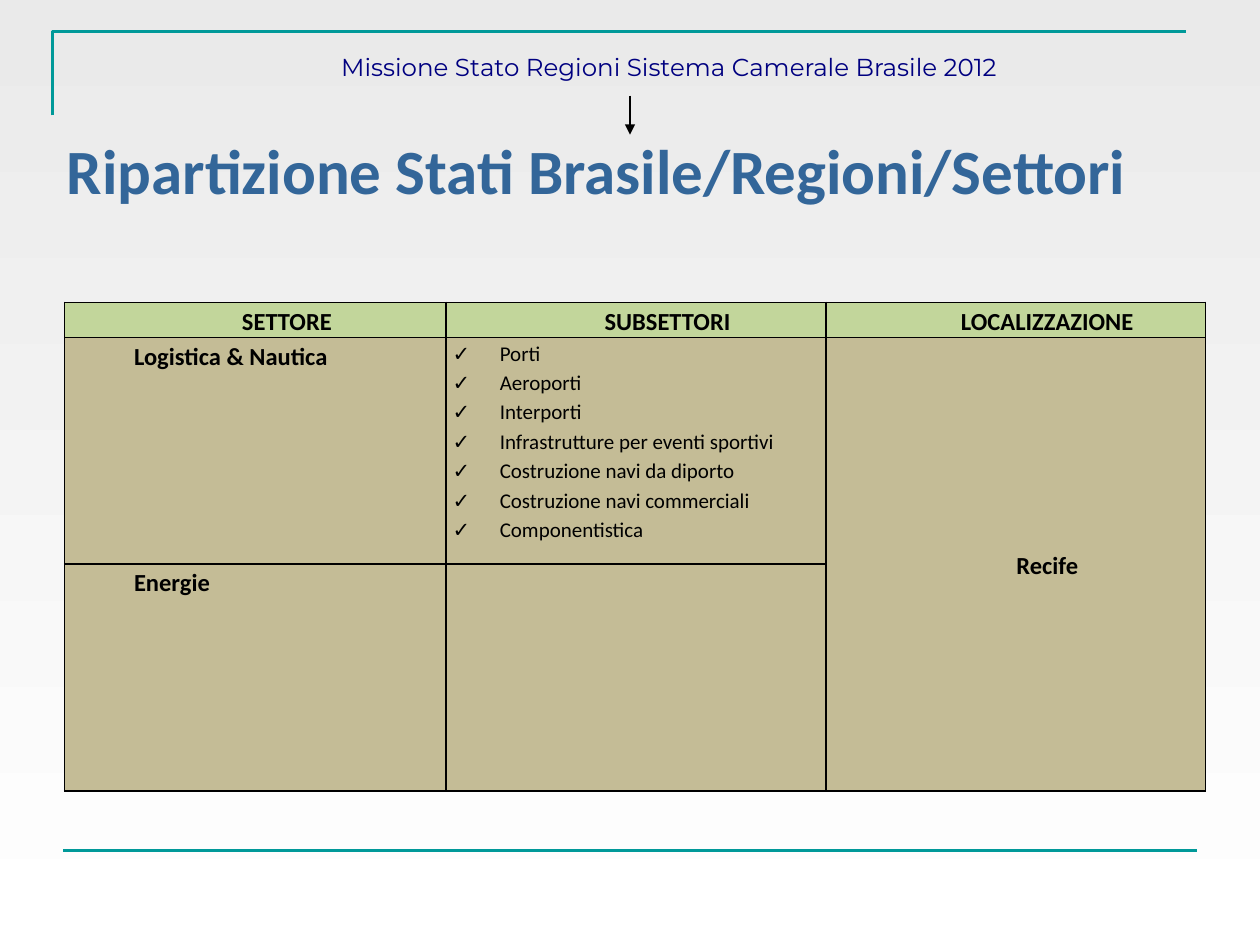
from dataclasses import dataclass

from lxml.etree import SubElement
from pptx import Presentation
from pptx.dml.color import RGBColor
from pptx.enum.shapes import MSO_CONNECTOR
from pptx.enum.text import MSO_ANCHOR, MSO_AUTO_SIZE, PP_ALIGN
from pptx.oxml import parse_xml
from pptx.oxml.ns import nsdecls, qn
from pptx.util import Pt


@dataclass(frozen=True)
class Theme:
    top: str = "EAEAEA"
    base: str = "FFFFFF"
    rule: str = "009999"
    event: str = "000080"
    title: str = "336699"
    ink: str = "000000"
    head: str = "C2D69B"
    body: str = "C4BC96"
    font: str = "Calibri"
    sans: str = "Montserrat"
    large: int = 36
    mid: int = 14
    small: int = 12


THEME = Theme()
COLS = (218, 217, 217)
ROWS = (20, 129.6, 129.6)
HEADS = ("SETTORE", "SUBSETTORI", "LOCALIZZAZIONE")
SECTORS = ("Logistica & Nautica", "Energie")
ITEMS = (
    "Porti",
    "Aeroporti",
    "Interporti",
    "Infrastrutture per eventi sportivi",
    "Costruzione navi da diporto",
    "Costruzione navi commerciali",
    "Componentistica",
)


def paint(color, value):
    color.rgb = RGBColor.from_string(value)


def write(frame, *lines, size=THEME.mid, font=THEME.font, color=THEME.ink,
          bold=False, align=PP_ALIGN.LEFT, space=None, left=0, hang=0,
          bullet=None):
    """Fill a text frame with one paragraph per line."""
    for num, line in enumerate(lines):
        para = frame.add_paragraph() if num else frame.paragraphs[0]
        para.alignment = align
        if space:
            para.line_spacing = space
        props = para._p.get_or_add_pPr()
        props.set("marL", str(Pt(left)))
        props.set("indent", str(Pt(-hang)))
        if bullet:
            SubElement(props, qn("a:buFont")).set("typeface", font)
            SubElement(props, qn("a:buChar")).set("char", bullet)
        run = para.add_run()
        run.text = line
        run.font.size = Pt(size)
        run.font.name = font
        run.font.bold = bold
        paint(run.font.color, color)


def shade(slide):
    fill = slide.background.fill
    fill.gradient()
    fill.gradient_angle = 270
    for stop, value in zip(fill.gradient_stops, (THEME.top, THEME.base)):
        paint(stop.color, value)


def place(shape, left, top, width, height):
    shape.left, shape.top = Pt(left), Pt(top)
    shape.width, shape.height = Pt(width), Pt(height)
    frame = shape.text_frame
    frame.word_wrap = False
    frame.auto_size = MSO_AUTO_SIZE.NONE
    frame.vertical_anchor = MSO_ANCHOR.TOP
    return frame


def add_line(slide, start, end, color, width, arrow=False):
    line = slide.shapes.add_connector(
        MSO_CONNECTOR.STRAIGHT, *map(Pt, start + end))
    paint(line.line.color, color)
    line.line.width = Pt(width)
    if arrow:
        tail = SubElement(line.line._get_or_add_ln(), qn("a:tailEnd"))
        tail.set("type", "triangle")
    SubElement(line._element.spPr, qn("a:effectLst"))


def add_frame(slide):
    """Draw the corner rule at the top left of the slide."""
    pen = slide.shapes.build_freeform(Pt(30), Pt(66))
    pen.add_line_segments(
        [(Pt(30), Pt(18)), (Pt(678), Pt(18))], close=False)
    shape = pen.convert_to_shape()
    shape.shadow.inherit = False
    shape.fill.background()
    paint(shape.line.color, THEME.rule)
    shape.line.width = Pt(1.5)


def style(cell, color):
    cell.margin_left = cell.margin_right = Pt(3.6)
    cell.margin_top = cell.margin_bottom = 0
    cell.fill.solid()
    paint(cell.fill.fore_color, color)
    props = cell._tc.get_or_add_tcPr()
    for num, side in enumerate("LRTB"):
        props.insert(num, parse_xml(
            f'<a:ln{side} {nsdecls("a")} w="{Pt(1)}"><a:solidFill>'
            f'<a:srgbClr val="{THEME.ink}"/></a:solidFill></a:ln{side}>'))


def add_grid(slide):
    table = slide.shapes.add_table(
        len(ROWS), len(COLS), Pt(37), Pt(172.8),
        Pt(sum(COLS)), Pt(sum(ROWS))).table
    table.first_row = table.horz_banding = False
    for col, width in zip(table.columns, COLS):
        col.width = Pt(width)
    for num, (row, height) in enumerate(zip(table.rows, ROWS)):
        row.height = Pt(height)
        for cell in row.cells:
            style(cell, THEME.body if num else THEME.head)

    site = table.cell(1, 2)
    site.merge(table.cell(2, 2))
    heads = zip(table.rows[0].cells, HEADS)
    for cell, text in (*heads, (site, "Recife")):
        cell.vertical_anchor = MSO_ANCHOR.MIDDLE
        write(cell.text_frame, text, bold=True, align=PP_ALIGN.CENTER,
              space=1.15, left=36)
    for num, text in enumerate(SECTORS, 1):
        write(table.cell(num, 0).text_frame, text, bold=True,
              space=1.15, left=36)
    write(table.cell(1, 1).text_frame, *ITEMS, size=THEME.small,
          space=1.15, left=27, hang=27, bullet="✓")


def main():
    deck = Presentation()
    deck.slide_width, deck.slide_height = Pt(720), Pt(540)
    slide = deck.slides.add_slide(deck.slide_layouts[5])
    shade(slide)
    add_frame(slide)
    add_line(slide, (36, 486), (684, 486), THEME.rule, 1.5)

    event = slide.shapes.add_textbox(0, 0, 0, 0)
    write(place(event, 127.5, 26, 510, 22),
          "Missione Stato Regioni Sistema Camerale Brasile 2012",
          font=THEME.sans, color=THEME.event, align=PP_ALIGN.CENTER)
    add_line(slide, (360, 54.7), (360, 77), THEME.ink, 0.75, arrow=True)
    write(place(slide.shapes.title, 21, 71.5, 640, 52),
          "Ripartizione Stati Brasile/Regioni/Settori", size=THEME.large,
          color=THEME.title, bold=True, align=PP_ALIGN.CENTER)
    add_grid(slide)
    deck.save("out.pptx")


if __name__ == "__main__":
    main()
